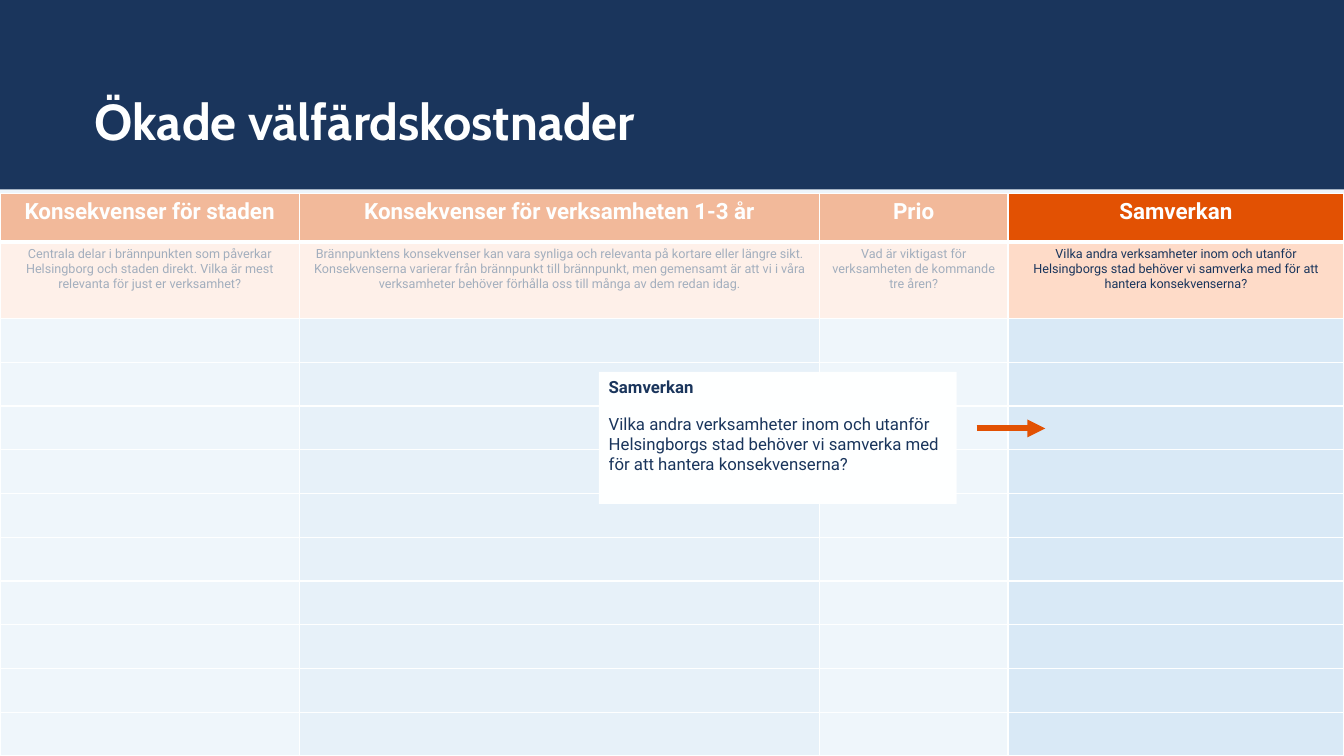
"""Build the slide about rising welfare costs and collaboration."""
from lxml.etree import SubElement
from pptx import Presentation
from pptx.dml.color import RGBColor
from pptx.enum.shapes import MSO_CONNECTOR as Connector, MSO_SHAPE as Shape
from pptx.enum.text import MSO_ANCHOR as Anchor, MSO_AUTO_SIZE as AutoSize, PP_ALIGN as Align
from pptx.oxml import parse_xml
from pptx.oxml.ns import nsdecls, qn
from pptx.util import Pt

NAVY = RGBColor(0x1A, 0x35, 0x5C)
WHITE = RGBColor(0xFE, 0xFF, 0xFF)
ORANGE = RGBColor(0xE2, 0x51, 0x03)
PEACH = RGBColor(0xFE, 0xDB, 0xC8)
BLUE = RGBColor(0xC6, 0xDE, 0xF2)
PALE_BLUE = RGBColor(0xEE, 0xF5, 0xFB)

TABLE_TOP = 138.24
TABLE_HEIGHT = 401.76
COLUMN_WIDTHS = [213.84, 371.52, 134.64, 240]
HEADER_HEIGHT, QUESTION_HEIGHT, ANSWER_HEIGHT = 34.56, 54.72, 31.25
ANSWER_ROWS = 10
ANSWER_OPACITIES = [50, 100, 50, 50]

HEADERS = [
    "Konsekvenser för staden",
    "Konsekvenser för verksamheten 1-3 år",
    "Prio",
    "Samverkan",
]
COLLABORATION = (
    "Vilka andra verksamheter inom och utanför Helsingborgs stad "
    "behöver vi samverka med för att hantera konsekvenserna?"
)
QUESTIONS = [
    "Centrala delar i brännpunkten som påverkar Helsingborg och staden direkt. "
    "Vilka är mest relevanta för just er verksamhet?",
    "Brännpunktens konsekvenser kan vara synliga och relevanta på kortare eller längre sikt. "
    "Konsekvenserna varierar från brännpunkt till brännpunkt, men gemensamt är att vi i våra "
    "verksamheter behöver förhålla oss till många av dem redan idag.",
    "Vad är viktigast för verksamheten de kommande tre åren?",
    COLLABORATION,
]


def write(paragraph, text, size, color=NAVY, font="Roboto", bold=False,
          align=Align.LEFT, before=0):
    """Write one formatted run in a paragraph."""
    paragraph.alignment = align
    paragraph.space_before = Pt(before)
    run = paragraph.add_run()
    run.text = text
    run.font.size = Pt(size)
    run.font.name = font
    run.font.bold = bold
    run.font.color.rgb = color


def fill_solid(fill, color, opacity=100):
    """Fill with a colour at a percentage of opacity."""
    fill.solid()
    fill.fore_color.rgb = color
    if opacity < 100:
        color_element = fill._xPr.find(qn("a:solidFill"))[0]
        SubElement(color_element, qn("a:alpha"), val=str(opacity * 1000))


def add_rectangle(slide, left, top, width, height, color, opacity=100):
    """Add a plain rectangle without line or shadow."""
    shape = slide.shapes.add_shape(Shape.RECTANGLE, Pt(left), Pt(top), Pt(width), Pt(height))
    shape.shadow.inherit = False
    shape.line.fill.background()
    fill_solid(shape.fill, color, opacity)
    return shape


def add_title(slide, text):
    """Format the title placeholder on a navy band."""
    title = slide.shapes.title
    band = add_rectangle(slide, 0, 0, 960, 135.36, NAVY)
    title.element.addprevious(band.element)
    title.left, title.top, title.width, title.height = Pt(67.68), Pt(17.28), Pt(720), Pt(90.72)
    frame = title.text_frame
    frame.auto_size = AutoSize.NONE
    frame.vertical_anchor = Anchor.BOTTOM
    frame.margin_left = frame.margin_top = frame.margin_right = frame.margin_bottom = 0
    paragraph = frame.paragraphs[0]
    paragraph.line_spacing = 0.9
    write(paragraph, text, 36, color=WHITE, font="Cabin", bold=True)


def set_borders(cell, top, bottom):
    """Give a cell white borders, with the top and bottom widths in points."""
    properties = cell._tc.get_or_add_tcPr()
    for index, (side, width) in enumerate([("L", 1), ("R", 1), ("T", top), ("B", bottom)]):
        properties.insert(index, parse_xml(
            f'<a:ln{side} {nsdecls("a")} w="{Pt(width)}"><a:solidFill>'
            f'<a:srgbClr val="{WHITE}"/></a:solidFill></a:ln{side}>'))


def add_consequence_table(slide):
    """Add the table with headers, questions and empty answer rows."""
    heights = [HEADER_HEIGHT, QUESTION_HEIGHT] + [ANSWER_HEIGHT] * ANSWER_ROWS
    table = slide.shapes.add_table(len(heights), len(COLUMN_WIDTHS), 0, Pt(TABLE_TOP),
                                   Pt(sum(COLUMN_WIDTHS)), Pt(TABLE_HEIGHT)).table
    table.first_row = table.horz_banding = False
    for row, height in zip(table.rows, heights):
        row.height = Pt(height)
    for index, width in enumerate(COLUMN_WIDTHS):
        table.columns[index].width = Pt(width)
        header, question, *answers = table.columns[index]._parent and [
            table.cell(row, index) for row in range(len(heights))]
        write(header.text_frame.paragraphs[0], HEADERS[index], 16,
              color=WHITE, bold=True, align=Align.CENTER)
        fill_solid(header.fill, ORANGE)
        set_borders(header, 1, 3)
        write(question.text_frame.paragraphs[0], QUESTIONS[index], 9, align=Align.CENTER)
        fill_solid(question.fill, PEACH)
        set_borders(question, 3, 1)
        for answer in answers:
            fill_solid(answer.fill, BLUE, ANSWER_OPACITIES[index])
            set_borders(answer, 1, 1)


def add_callout(slide):
    """Add the white box that explains the highlighted column."""
    box = add_rectangle(slide, 427.68, 265.68, 255.6, 94.32, WHITE)
    frame = box.text_frame
    frame.word_wrap = True
    frame.vertical_anchor = Anchor.TOP
    write(frame.paragraphs[0], "Samverkan", 12, bold=True)
    write(frame.add_paragraph(), COLLABORATION, 12, before=12)


def add_arrow(slide, start, end, height):
    """Add a horizontal orange arrow."""
    arrow = slide.shapes.add_connector(
        Connector.STRAIGHT, Pt(start), Pt(height), Pt(end), Pt(height))
    arrow.line.color.rgb = ORANGE
    arrow.line.width = Pt(4.25)
    SubElement(arrow.line._get_or_add_ln(), qn("a:tailEnd"), type="triangle")
    SubElement(arrow.element.spPr, qn("a:effectLst"))


def main():
    """Build and save the presentation."""
    presentation = Presentation()
    presentation.slide_width, presentation.slide_height = Pt(960), Pt(540)
    slide = presentation.slides.add_slide(presentation.slide_layouts[5])
    fill_solid(slide.background.fill, PALE_BLUE)
    add_title(slide, "Ökade välfärdskostnader")
    add_consequence_table(slide)
    add_rectangle(slide, 0, TABLE_TOP, sum(COLUMN_WIDTHS[:3]), TABLE_HEIGHT, WHITE, opacity=60)
    add_callout(slide)
    add_arrow(slide, 697.68, 746.64, 306)
    presentation.save("out.pptx")


if __name__ == "__main__":
    main()
